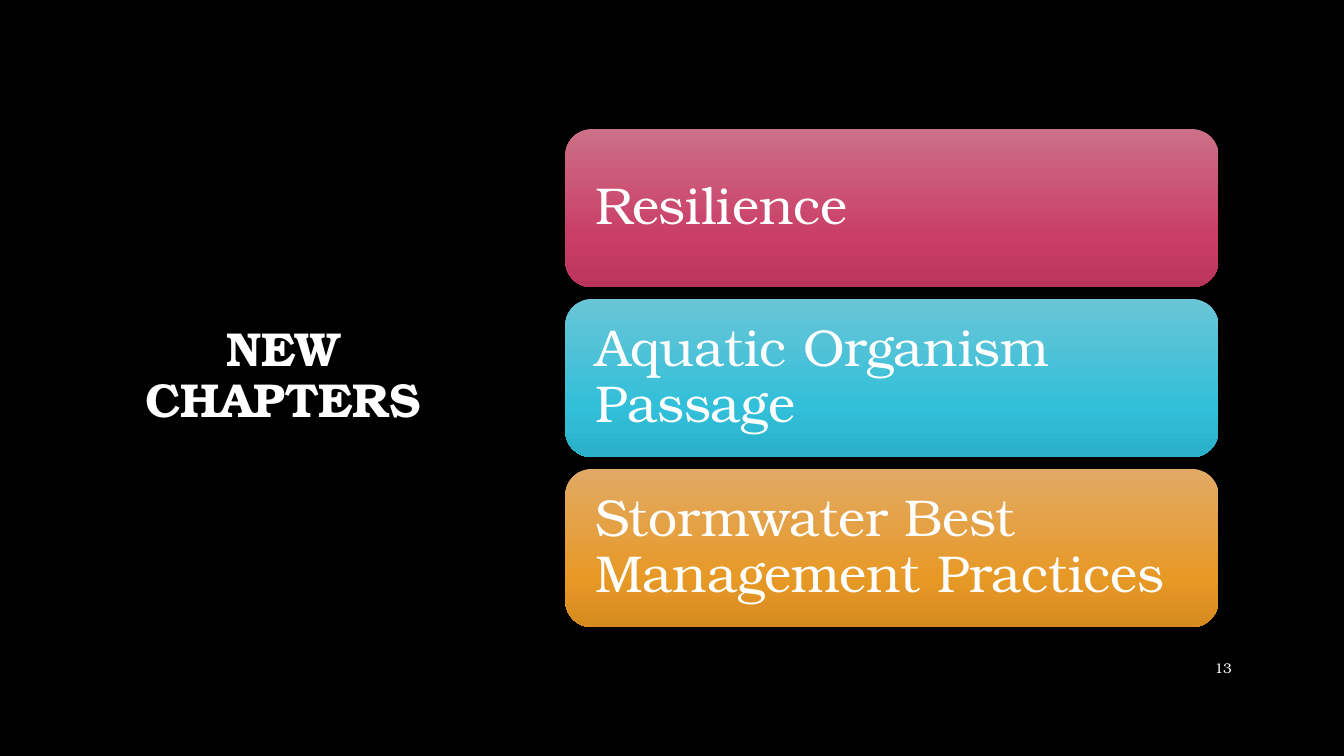
"""Build the slide that lists the new chapters."""
from copy import deepcopy
from dataclasses import dataclass

from pptx import Presentation
from pptx.dml.color import RGBColor
from pptx.enum.shapes import MSO_SHAPE
from pptx.enum.text import MSO_ANCHOR, PP_ALIGN
from pptx.oxml.ns import qn
from pptx.shapes.autoshape import Shape
from pptx.slide import Slide
from pptx.util import Pt

ROUND = MSO_SHAPE.ROUNDED_RECTANGLE
MIDDLE = MSO_ANCHOR.MIDDLE
LEFT, CENTER, RIGHT = PP_ALIGN.LEFT, PP_ALIGN.CENTER, PP_ALIGN.RIGHT

BLACK = RGBColor(0x00, 0x00, 0x00)
WHITE = RGBColor(0xFF, 0xFF, 0xFF)
ROSE = (RGBColor(0xCC, 0x70, 0x87), RGBColor(0xCA, 0x3D, 0x66), RGBColor(0xBA, 0x35, 0x5B))
AQUA = (RGBColor(0x6A, 0xC5, 0xD7), RGBColor(0x32, 0xBF, 0xD9), RGBColor(0x2A, 0xB0, 0xC8))
AMBER = (RGBColor(0xE2, 0xAA, 0x66), RGBColor(0xE7, 0x99, 0x26), RGBColor(0xD6, 0x8B, 0x1F))

FONT = "TeX Gyre Bonum"
STOPS = (0, 0.69, 1)
CARD_LEFT, CARD_TOP, CARD_WIDTH, CARD_HEIGHT = 403.8, 92.2, 466.5, 113
CARD_STEP = 121.4
CARD_INSET = {f"margin_{side}": Pt(16) for side in ("left", "top", "right", "bottom")}


@dataclass(frozen=True)
class Card:
    """Hold one chapter card."""
    text: str
    tones: tuple[RGBColor, RGBColor, RGBColor]


@dataclass(frozen=True)
class Label:
    """Hold one plain text box."""
    text: str
    left: float
    top: float
    width: float
    height: float
    size: float
    align: PP_ALIGN
    bold: bool = False
    spacing: float = 1.0


CARDS = (
    Card("Resilience", ROSE),
    Card("Aquatic Organism Passage", AQUA),
    Card("Stormwater Best Management Practices", AMBER),
)
LABELS = (
    Label("NEW CHAPTERS", 59, 48.2, 286.6, 441.4, 34, CENTER, True, 0.9),
    Label("13", 828, 463, 59, 28.8, 10, RIGHT),
)


def write(shape: Shape, text: str, size: float, align: PP_ALIGN,
          bold: bool, spacing: float) -> None:
    """Put styled text in a shape."""
    frame = shape.text_frame
    frame.word_wrap = True
    frame.vertical_anchor = MIDDLE
    para = frame.paragraphs[0]
    para.alignment = align
    para.line_spacing = spacing
    run = para.add_run()
    run.text = text
    run.font.color.rgb = WHITE
    style = {"name": FONT, "size": Pt(size), "bold": bold}
    for key, value in style.items():
        setattr(run.font, key, value)


def shade(shape: Shape, tones: tuple[RGBColor, ...]) -> None:
    """Fill a shape with a gradient from top to bottom."""
    fill = shape.fill
    fill.gradient()
    fill.gradient_angle = 270
    first = shape.element.spPr.find(f".//{qn('a:gs')}")
    first.addnext(deepcopy(first))
    for stop, place, tone in zip(fill.gradient_stops, STOPS, tones):
        stop.position = place
        stop.color.rgb = tone


def add_card(slide: Slide, card: Card, index: int) -> None:
    """Draw one chapter card in the stack."""
    top = CARD_TOP + index * CARD_STEP
    shape = slide.shapes.add_shape(
        ROUND, Pt(CARD_LEFT), Pt(top), Pt(CARD_WIDTH), Pt(CARD_HEIGHT))
    shape.shadow.inherit = False
    shape.line.fill.background()
    shade(shape, card.tones)
    for key, value in CARD_INSET.items():
        setattr(shape.text_frame, key, value)
    write(shape, card.text, 37, LEFT, False, 0.9)


def add_label(slide: Slide, label: Label) -> None:
    """Draw one plain text box."""
    box = slide.shapes.add_textbox(
        Pt(label.left), Pt(label.top), Pt(label.width), Pt(label.height))
    write(box, label.text, label.size, label.align, label.bold, label.spacing)


def main() -> None:
    """Build and save the deck."""
    deck = Presentation()
    deck.slide_width, deck.slide_height = Pt(960), Pt(540)
    slide = deck.slides.add_slide(deck.slide_layouts[6])
    back = slide.background.fill
    back.solid()
    back.fore_color.rgb = BLACK
    for label in LABELS:
        add_label(slide, label)
    for index, card in enumerate(CARDS):
        add_card(slide, card, index)
    deck.save("out.pptx")


if __name__ == "__main__":
    main()
